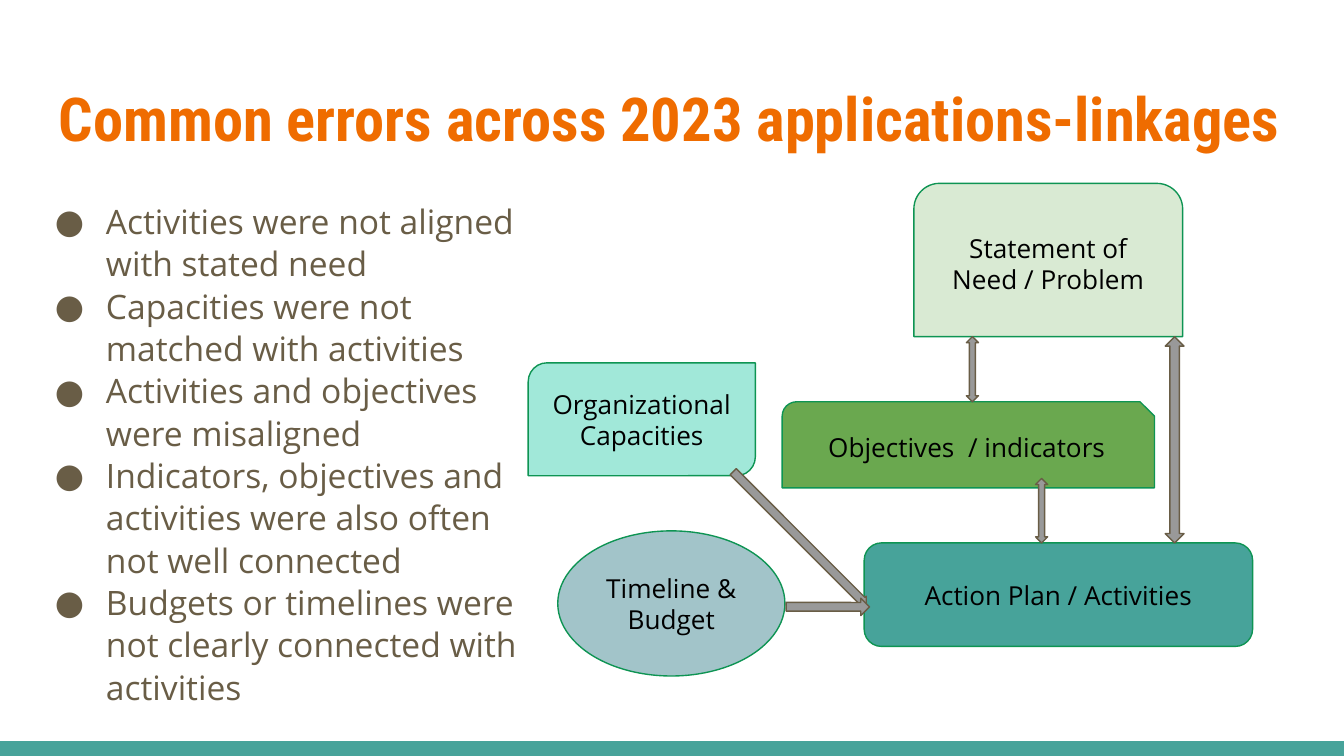
from lxml.etree import SubElement
from pptx import Presentation
from pptx.dml.color import RGBColor
from pptx.enum.shapes import MSO_SHAPE as Shape
from pptx.enum.text import MSO_ANCHOR as Anchor, PP_ALIGN as Align
from pptx.oxml.ns import qn
from pptx.util import Inches, Pt

# Content
TITLE = "Common errors across 2023 applications-linkages"
ERRORS = [
    "Activities were not aligned with stated need",
    "Capacities were not matched with activities",
    "Activities and objectives were misaligned",
    "Indicators, objectives and activities were also often not well connected",
    "Budgets or timelines were not clearly connected with activities",
]

COLORS = {
    "title": "EF6C00", "body": "695D46", "label": "000000",
    "outline": "0E9453", "arrow": "999999", "teal": "47A39A",
    "mint": "A1E8D9", "steel": "A2C4C9", "pale": "D9EAD3", "green": "6AA84F",
}
HEADING_FONT, BODY_FONT = "Roboto Condensed", "Open Sans"

# Grid: 100 square columns across the slide; places are column, row, columns, rows
WIDTH, HEIGHT, COLUMNS = 10, 5.625, 100
ROWS = COLUMNS * HEIGHT / WIDTH
FOOTER_ROWS = 1.1
TITLE_PLACE = (3.4, 4.9, 93.2, 7.7)
ERRORS_PLACE = (1.9, 13.8, 38.4, 40.3)

# name: label, preset, fill, place, corner adjustments
BOXES = {
    "plan": ("Action Plan / Activities", Shape.ROUNDED_RECTANGLE, "teal",
             (64.3, 40.4, 28.9, 7.7), (0.167,)),
    "capacities": ("Organizational Capacities", Shape.ROUND_2_DIAG_RECTANGLE, "mint",
                   (39.3, 27, 16.9, 8.4), (0.167, 0)),
    "budget": ("Timeline & Budget", Shape.OVAL, "steel",
               (41.5, 39.5, 16.9, 10.8), ()),
    "need": ("Statement of Need / Problem", Shape.ROUND_2_SAME_RECTANGLE, "pale",
             (68, 13.65, 20, 11.4), (0.167, 0)),
    "objectives": ("Objectives  / indicators", Shape.SNIP_ROUND_RECTANGLE, "green",
                   (58.2, 29.9, 27.7, 6.4), (0.167, 0.167)),
}

# Two-way links: upper box, lower box, centre column, thickness, overlap with upper box
LINKS = [
    ("need", "objectives", 72.35, 0.9, 0),
    ("need", "plan", 87.4, 1.4, 0),
    ("objectives", "plan", 77.5, 0.9, 0.7),
]

# One-way arrows into the plan: place, rotation, shaft share
FEEDS = [
    ((52.5, 39.6, 14, 0.9), 45, 0.71),
    ((58.5, 44.5, 6.2, 1.3), 0.1, 0.5),
]

presentation = Presentation()
presentation.slide_width, presentation.slide_height = Inches(WIDTH), Inches(HEIGHT)
slide = presentation.slides.add_slide(presentation.slide_layouts[6])


def color(name):
    return RGBColor.from_string(COLORS[name])


def on_grid(place):
    return [Inches(value * WIDTH / COLUMNS) for value in place]


def add_preset(preset, place, fill, outline=None, adjustments=()):
    shape = slide.shapes.add_shape(preset, *on_grid(place))
    shape.shadow.inherit = False
    shape.fill.solid()
    shape.fill.fore_color.rgb = color(fill)
    if outline:
        shape.line.color.rgb = color(outline)
        shape.line.width = Pt(0.75)
    else:
        shape.line.fill.background()
    for index, value in enumerate(adjustments):
        shape.adjustments[index] = value
    return shape


def prepare_frame(shape, anchor):
    frame = shape.text_frame
    frame.word_wrap = True
    frame.vertical_anchor = anchor
    frame.margin_left = frame.margin_right = Inches(0.1)
    frame.margin_top = frame.margin_bottom = Inches(0.1)
    return frame


def add_run(paragraph, text, font, size, fill, bold=False):
    run = paragraph.add_run()
    run.text = text
    run.font.name, run.font.size, run.font.bold = font, Pt(size), bold
    run.font.color.rgb = color(fill)


def add_bullet(paragraph):
    properties = paragraph._p.get_or_add_pPr()
    properties.set("marL", str(Inches(0.5)))
    properties.set("indent", str(Inches(-0.38)))
    bullet_color = SubElement(properties, qn("a:buClr"))
    SubElement(bullet_color, qn("a:srgbClr"), val=COLORS["body"])
    SubElement(properties, qn("a:buFont"), typeface=BODY_FONT)
    SubElement(properties, qn("a:buChar"), char="●")


# Footer band
add_preset(Shape.RECTANGLE, (0, ROWS - FOOTER_ROWS, COLUMNS, FOOTER_ROWS), "teal")

# Title
title = slide.shapes.add_textbox(*on_grid(TITLE_PLACE))
frame = prepare_frame(title, Anchor.MIDDLE)
add_run(frame.paragraphs[0], TITLE, HEADING_FONT, 32.4, "title", bold=True)

# Bulleted errors
errors = slide.shapes.add_textbox(*on_grid(ERRORS_PLACE))
frame = prepare_frame(errors, Anchor.TOP)
for index, text in enumerate(ERRORS):
    paragraph = frame.add_paragraph() if index else frame.paragraphs[0]
    paragraph.line_spacing = 1.05
    add_bullet(paragraph)
    add_run(paragraph, text, BODY_FONT, 18, "body")

# Diagram boxes
for label, preset, fill, place, adjustments in BOXES.values():
    box = add_preset(preset, place, fill, "outline", adjustments)
    paragraph = prepare_frame(box, Anchor.MIDDLE).paragraphs[0]
    paragraph.alignment = Align.CENTER
    add_run(paragraph, label, BODY_FONT, 14, "label")

# Two-way arrows span the gap between their boxes
for upper, lower, centre, thickness, overlap in LINKS:
    _, upper_row, _, upper_rows = BOXES[upper][3]
    top = upper_row + upper_rows - overlap
    bottom = BOXES[lower][3][1]
    place = (centre - thickness / 2, top, thickness, bottom - top)
    add_preset(Shape.UP_DOWN_ARROW, place, "arrow", "body", (0.5, 0.5))

# One-way arrows
for place, rotation, shaft in FEEDS:
    arrow = add_preset(Shape.RIGHT_ARROW, place, "arrow", "body", (shaft, 0.5))
    arrow.rotation = rotation

presentation.save("out.pptx")
